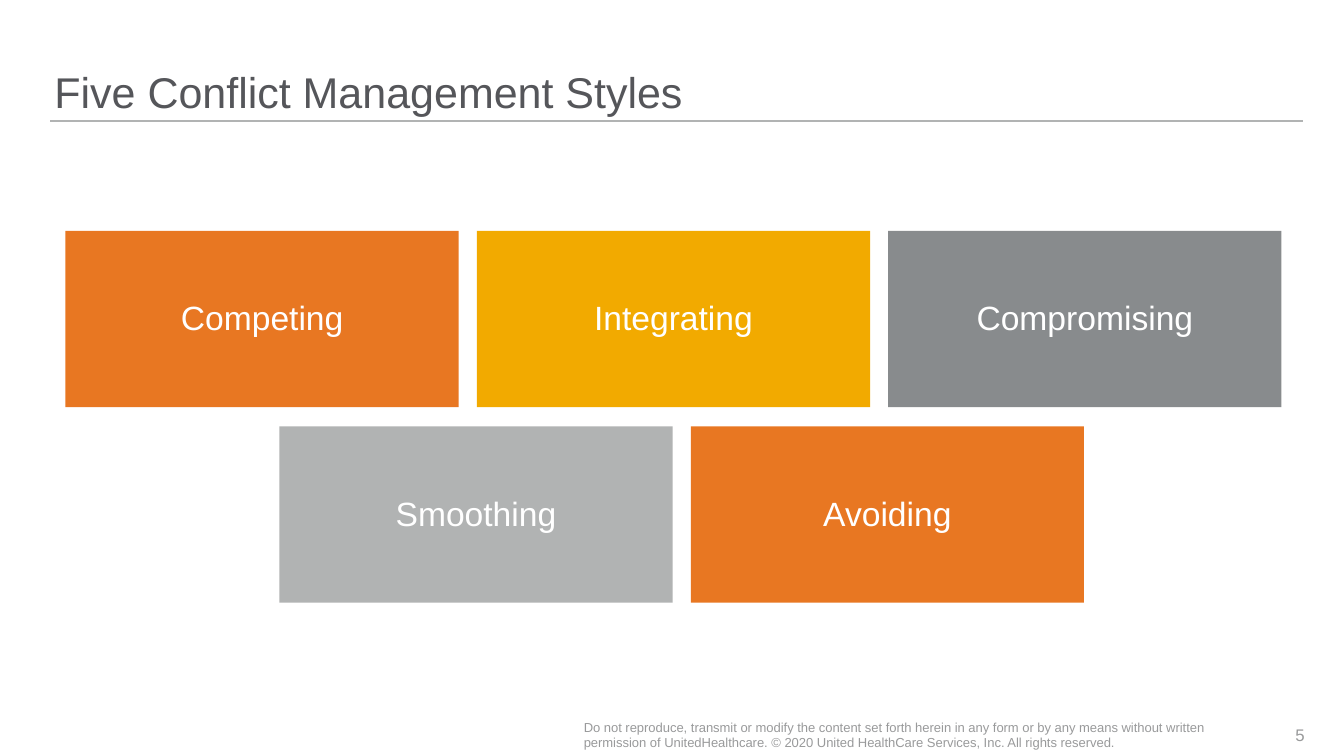
from lxml.etree import SubElement
from pptx import Presentation
from pptx.dml.color import RGBColor
from pptx.enum.shapes import MSO_CONNECTOR as Connector, MSO_SHAPE as Shape
from pptx.enum.text import MSO_ANCHOR as Anchor, PP_ALIGN as Align
from pptx.oxml.ns import qn
from pptx.util import Inches, Pt

COLORS = {
    "title": "55565A", "footer": "999A9B", "rule": "B1B3B3", "white": "FFFFFF",
    "orange": "E87722", "amber": "F2AA00", "gray": "888B8D", "silver": "B1B3B3",
}
STYLES = [  # label, fill, column, row
    ("Competing", "orange", 0, 0),
    ("Integrating", "amber", 1, 0),
    ("Compromising", "gray", 2, 0),
    ("Smoothing", "silver", 0.52, 1),
    ("Avoiding", "orange", 1.52, 1),
]
COPYRIGHT = (
    "Do not reproduce, transmit or modify the content set forth herein in any form "
    "or by any means without written permission of UnitedHealthcare. "
    "© 2020 United HealthCare Services, Inc. All rights reserved."
)


def rgb(name):
    return RGBColor.from_string(COLORS[name])


def write(tf, text, size, color, align=Align.LEFT, anchor=Anchor.MIDDLE,
          bottom=0, spacing=None):
    tf.word_wrap = True
    tf.vertical_anchor = anchor
    tf.margin_left = tf.margin_top = tf.margin_right = 0
    tf.margin_bottom = Inches(bottom)
    p = tf.paragraphs[0]
    p.alignment = align
    p.line_spacing = spacing
    r = p.add_run()
    r.text = text
    r.font.name = "Arial"
    r.font.size = Pt(size)
    r.font.color.rgb = rgb(color)


class Deck:
    LEFT, TOP = 0.65, 2.29
    TILE_W, TILE_H = 3.9, 1.75
    COL, ROW = 4.08, 1.94

    def __init__(self):
        self.prs = Presentation()
        self.prs.slide_width, self.prs.slide_height = Inches(13.33), Inches(7.5)
        self.s = self.prs.slides.add_slide(self.prs.slide_layouts[6])

    def rule(self, x1, x2, y):
        line = self.s.shapes.add_connector(
            Connector.STRAIGHT, Inches(x1), Inches(y), Inches(x2), Inches(y))
        line.line.color.rgb = rgb("rule")
        line.line.width = Pt(1)
        SubElement(line._element.spPr, qn("a:effectLst"))

    def text(self, box, text, **fmt):
        tb = self.s.shapes.add_textbox(*map(Inches, box))
        write(tb.text_frame, text, **fmt)

    def tile(self, label, fill, col, row):
        """Place a labelled tile at a grid position; columns may be fractional."""
        x, y = self.LEFT + col * self.COL, self.TOP + row * self.ROW
        sp = self.s.shapes.add_shape(
            Shape.RECTANGLE, *map(Inches, (x, y, self.TILE_W, self.TILE_H)))
        sp.shadow.inherit = False
        sp.fill.solid()
        sp.fill.fore_color.rgb = rgb(fill)
        sp.line.fill.background()
        write(sp.text_frame, label, size=24, color="white", align=Align.CENTER,
              bottom=0.04)


def main():
    deck = Deck()
    deck.rule(0.5, 12.92, 1.2)
    deck.text((0.54, 0, 12.38, 1.17), "Five Conflict Management Styles",
              size=30.7, color="title", anchor=Anchor.BOTTOM, spacing=0.9)
    deck.text((12.27, 7.09, 0.67, 0.4), "5", size=12, color="footer", align=Align.RIGHT)
    deck.text((5.79, 7.09, 6.48, 0.4), COPYRIGHT, size=9.3, color="footer")
    for style in STYLES:
        deck.tile(*style)
    deck.prs.save("out.pptx")


if __name__ == "__main__":
    main()
